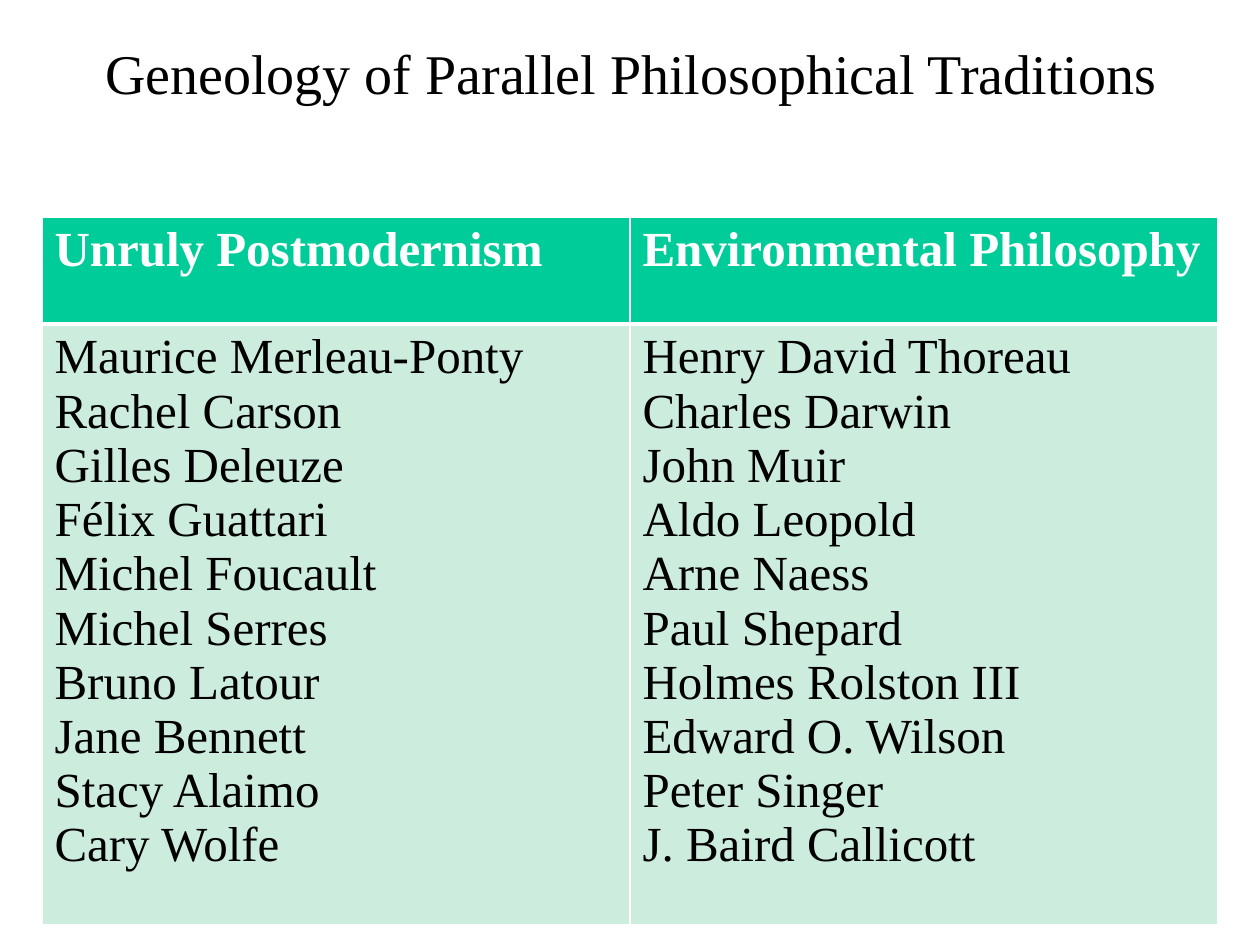
import pptx
import pptx.dml.color
import pptx.enum.text
import pptx.oxml.ns
import pptx.util
from lxml import etree

PX = 914400 / 126
FONT = "Times New Roman"
COLORS = {"text": "000000", "white": "FFFFFF", "header": "00CC99", "body": "CCECDE"}

TRADITIONS = {
    "Unruly Postmodernism": [
        "Maurice Merleau-Ponty", "Rachel Carson", "Gilles Deleuze", "Félix Guattari",
        "Michel Foucault", "Michel Serres", "Bruno Latour", "Jane Bennett",
        "Stacy Alaimo", "Cary Wolfe",
    ],
    "Environmental Philosophy": [
        "Henry David Thoreau", "Charles Darwin", "John Muir", "Aldo Leopold",
        "Arne Naess", "Paul Shepard", "Holmes Rolston III", "Edward O. Wilson",
        "Peter Singer", "J. Baird Callicott",
    ],
}


def px(length):
    return pptx.util.Emu(round(length * PX))


def color(name):
    return pptx.dml.color.RGBColor.from_string(COLORS[name])


def style_text(frame, size, color_name, bold=False):
    for para in frame.paragraphs:
        for span in para.runs:
            span.font.name = FONT
            span.font.size = pptx.util.Pt(size)
            span.font.bold = bold
            span.font.color.rgb = color(color_name)


def add_title(page, text, left, top, width, height):
    box = page.shapes.add_textbox(px(left), px(top), px(width), px(height))
    frame = box.text_frame
    frame.word_wrap = False
    frame.auto_size = pptx.enum.text.MSO_AUTO_SIZE.SHAPE_TO_FIT_TEXT
    frame.text = text
    frame.paragraphs[0].alignment = pptx.enum.text.PP_ALIGN.CENTER
    style_text(frame, 32, "text")


def set_borders(cell, **widths):
    """Draw white borders; widths in points are keyed by side: L, R, T, B."""
    properties = cell._tc.get_or_add_tcPr()
    qn = pptx.oxml.ns.qn
    for side, width in widths.items():
        line = etree.SubElement(properties, qn(f"a:ln{side}"), w=str(pptx.util.Pt(width)))
        fill = etree.SubElement(line, qn("a:solidFill"))
        etree.SubElement(fill, qn("a:srgbClr"), val=COLORS["white"])


def fill_cell(cell, text, fill, text_color, bold, top, bottom):
    cell.text_frame.text = text
    style_text(cell.text_frame, 28, text_color, bold)
    # Borders come before the fill in the cell properties
    set_borders(cell, L=1, R=1, T=top, B=bottom)
    cell.fill.solid()
    cell.fill.fore_color.rgb = color(fill)


def add_traditions(page, left, top, column_width, row_heights):
    columns = len(TRADITIONS)
    frame = page.shapes.add_table(
        len(row_heights), columns, px(left), px(top),
        px(column_width * columns), px(sum(row_heights)))
    table = frame.table
    for row, height in zip(table.rows, row_heights):
        row.height = px(height)
    for index, (heading, thinkers) in enumerate(TRADITIONS.items()):
        table.columns[index].width = px(column_width)
        fill_cell(table.cell(0, index), heading, "header", "white", True, 1, 3)
        fill_cell(table.cell(1, index), "\n".join(thinkers), "body", "text", False, 3, 1)


def main():
    deck = pptx.Presentation()
    deck.slide_width, deck.slide_height = px(1260), px(945)
    page = deck.slides.add_slide(deck.slide_layouts[6])

    # Title
    add_title(page, "Geneology of Parallel Philosophical Traditions", 88, 32, 1087, 81)

    # Two traditions side by side
    add_traditions(page, 42, 217, 588, [107, 600])

    deck.save("out.pptx")


if __name__ == "__main__":
    main()
